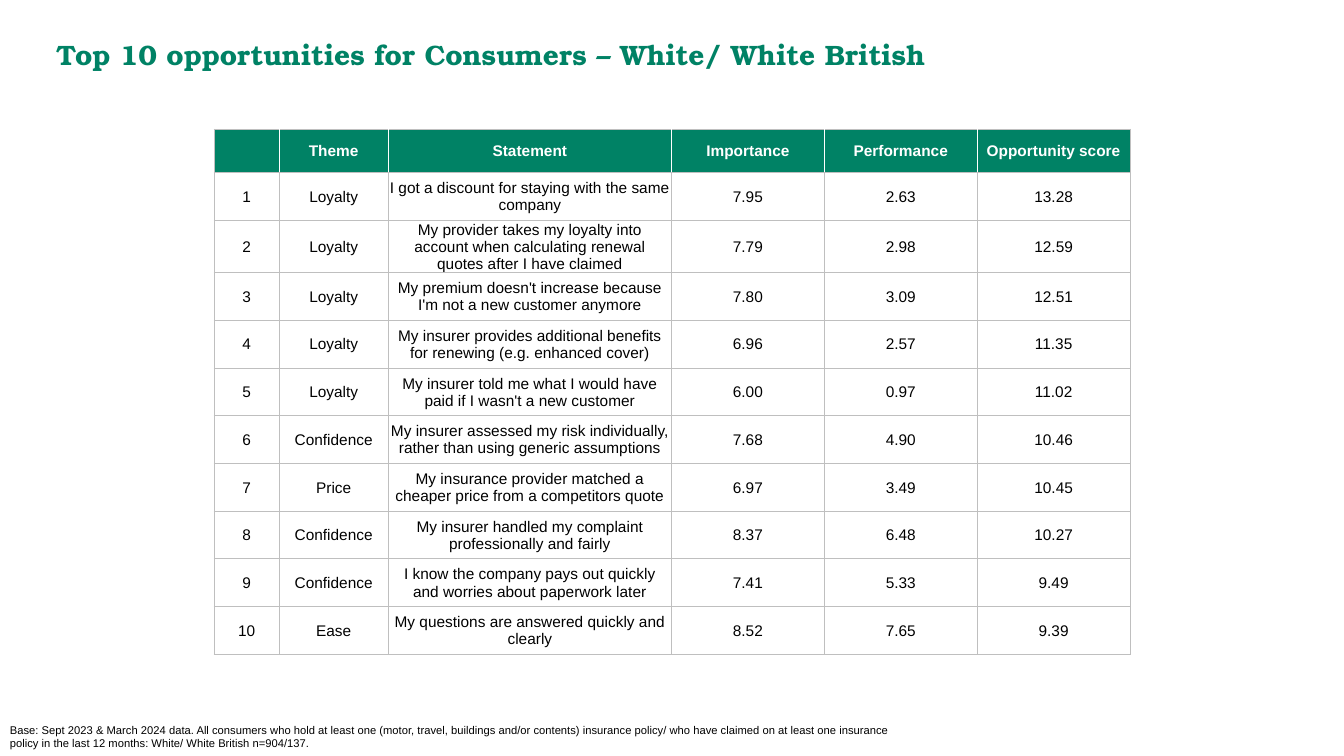
from lxml import etree
from pptx import Presentation
from pptx import util as u
from pptx.dml import color
from pptx.enum import text
from pptx.oxml import ns

COLORS = {"green": "008265", "white": "FFFFFF", "black": "000000", "grey": "BFBFBF"}

HEADINGS = ["", "Theme", "Statement", "Importance", "Performance", "Opportunity score"]
OPPORTUNITIES = [
    ("Loyalty", "I got a discount for staying with the same company", "7.95", "2.63", "13.28"),
    ("Loyalty", "My provider takes my loyalty into account when calculating renewal quotes "
     "after I have claimed", "7.79", "2.98", "12.59"),
    ("Loyalty", "My premium doesn't increase because I'm not a new customer anymore",
     "7.80", "3.09", "12.51"),
    ("Loyalty", "My insurer provides additional benefits for renewing (e.g. enhanced cover)",
     "6.96", "2.57", "11.35"),
    ("Loyalty", "My insurer told me what I would have paid if I wasn't a new customer",
     "6.00", "0.97", "11.02"),
    ("Confidence", "My insurer assessed my risk individually, rather than using generic assumptions",
     "7.68", "4.90", "10.46"),
    ("Price", "My insurance provider matched a cheaper price from a competitors quote",
     "6.97", "3.49", "10.45"),
    ("Confidence", "My insurer handled my complaint professionally and fairly",
     "8.37", "6.48", "10.27"),
    ("Confidence", "I know the company pays out quickly and worries about paperwork later",
     "7.41", "5.33", "9.49"),
    ("Ease", "My questions are answered quickly and clearly", "8.52", "7.65", "9.39"),
]
COLUMN_WIDTHS = [46.5, 78, 202.3, 109.2, 109.2, 109.2]
HEADER_HEIGHT, ROW_HEIGHT = 31, 34.1


def write(frame, content, *, size, font="Arial", fill="black", bold=False,
          align=text.PP_ALIGN.LEFT):
    frame.word_wrap = True
    paragraph = frame.paragraphs[0]
    paragraph.alignment = align
    paragraph.font.size = u.Pt(size)
    if content:
        run = paragraph.add_run()
        run.text = content
        run.font.name = font
        run.font.size = u.Pt(size)
        run.font.bold = bold
        run.font.color.rgb = color.RGBColor.from_string(COLORS[fill])


class SlideBuilder:
    def __init__(self, presentation):
        self.slide = presentation.slides.add_slide(presentation.slide_layouts[5])

    def title(self, content, left, top, width, height):
        shape = self.slide.shapes.title
        shape.left, shape.top, shape.width, shape.height = map(u.Pt, (left, top, width, height))
        frame = shape.text_frame
        frame.auto_size = text.MSO_AUTO_SIZE.NONE
        frame.vertical_anchor = text.MSO_ANCHOR.TOP
        write(frame, content, size=20, font="TeX Gyre Bonum", fill="green", bold=True)

    def note(self, content, left, top, width, height):
        shape = self.slide.shapes.add_textbox(*map(u.Pt, (left, top, width, height)))
        write(shape.text_frame, content, size=8)

    def border(self, cell, side, fill, width):
        properties = cell._tc.get_or_add_tcPr()
        line = etree.SubElement(properties, ns.qn(f"a:ln{side}"), w=str(u.Pt(width)))
        solid = etree.SubElement(line, ns.qn("a:solidFill"))
        etree.SubElement(solid, ns.qn("a:srgbClr"), val=COLORS[fill])

    def cell(self, cell, content, header, first, last):
        cell.margin_left = cell.margin_right = cell.margin_top = u.Pt(0.6)
        cell.margin_bottom = 0
        cell.vertical_anchor = text.MSO_ANCHOR.MIDDLE
        write(cell.text_frame, content, size=11, bold=header,
              fill="white" if header else "black", align=text.PP_ALIGN.CENTER)
        # White dividers separate the header cells
        for side, outer in (("L", first), ("R", last), ("T", True), ("B", True)):
            divider = header and not outer
            self.border(cell, side, *(("white", 1) if divider else ("grey", 0.75)))
        if header:
            cell.fill.solid()
            cell.fill.fore_color.rgb = color.RGBColor.from_string(COLORS["green"])
        else:
            cell.fill.background()

    def table(self, rows, left, top):
        heights = [HEADER_HEIGHT] + [ROW_HEIGHT] * (len(rows) - 1)
        table = self.slide.shapes.add_table(
            len(rows), len(COLUMN_WIDTHS), u.Pt(left), u.Pt(top),
            u.Pt(sum(COLUMN_WIDTHS)), u.Pt(sum(heights))).table
        table.horz_banding = False
        for column, width in zip(table.columns, COLUMN_WIDTHS):
            column.width = u.Pt(width)
        for row, height in zip(table.rows, heights):
            row.height = u.Pt(height)
        for r, row in enumerate(rows):
            for c, content in enumerate(row):
                self.cell(table.cell(r, c), content, header=r == 0,
                          first=c == 0, last=c == len(row) - 1)


def main():
    presentation = Presentation()
    presentation.slide_width, presentation.slide_height = u.Pt(960), u.Pt(540)
    builder = SlideBuilder(presentation)

    # Title
    builder.title("Top 10 opportunities for Consumers – White/ White British", 33.1, 23, 884, 32)

    # Ranked opportunities
    ranked = [(str(rank), *row) for rank, row in enumerate(OPPORTUNITIES, 1)]
    builder.table([HEADINGS, *ranked], 152.9, 92.3)

    # Sample base
    builder.note("Base: Sept 2023 & March 2024 data. All consumers who hold at least one (motor, "
                 "travel, buildings and/or contents) insurance policy/ who have claimed on at "
                 "least one insurance policy in the last 12 months: White/ White British "
                 "n=904/137.", 0, 512.8, 664.6, 27.2)

    presentation.save("out.pptx")


if __name__ == "__main__":
    main()
